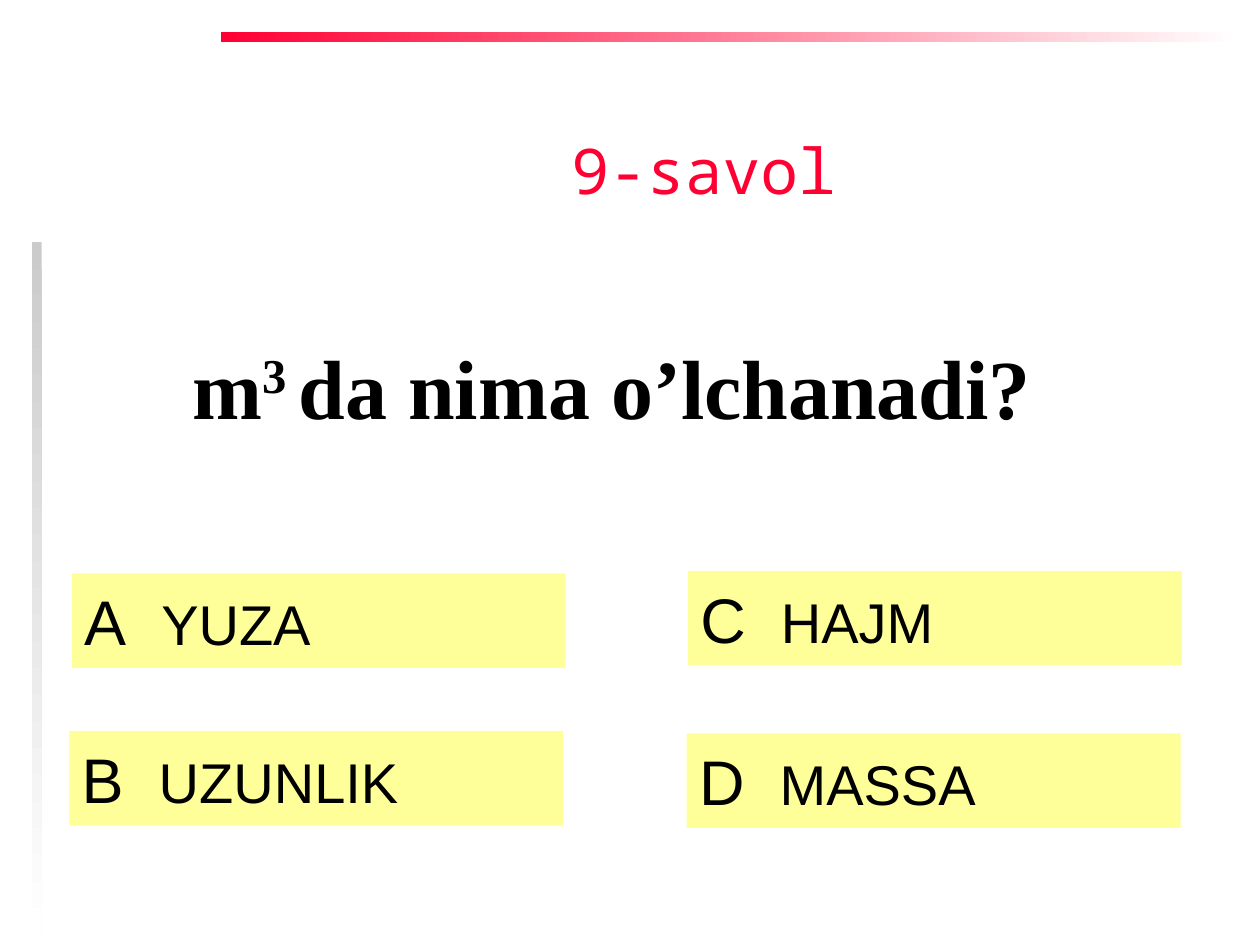
from lxml import etree
from pptx import Presentation
from pptx.dml.color import RGBColor
from pptx.enum.shapes import MSO_SHAPE
from pptx.enum.text import MSO_ANCHOR, MSO_AUTO_SIZE, PP_ALIGN
from pptx.oxml.ns import qn
from pptx.util import Inches, Pt

RECT = MSO_SHAPE.RECTANGLE
MIDDLE, TOP = MSO_ANCHOR.MIDDLE, MSO_ANCHOR.TOP
CENTER, LEFT = PP_ALIGN.CENTER, PP_ALIGN.LEFT
NO_FIT = MSO_AUTO_SIZE.NONE
COLORS = {"red": "FF0033", "gray": "CBCBCB", "white": "FFFFFF",
          "yellow": "FFFF99", "black": "000000"}


def add_run(p, text, size, font, color="black", bold=False, baseline=0):
    r = p.add_run()
    r.text = text
    r.font.size = Pt(size)
    r.font.name = font
    r.font.bold = bold
    r.font.color.rgb = RGBColor.from_string(COLORS[color])
    if baseline:
        r._r.get_or_add_rPr().set("baseline", str(baseline * 1000))


def add_rect(s, left, top, width, height):
    sp = s.shapes.add_shape(RECT, Inches(left), Inches(top), Inches(width), Inches(height))
    sp.shadow.inherit = False
    sp.line.fill.background()
    return sp


prs = Presentation()
prs.slide_width, prs.slide_height = Inches(10), Inches(7.5)
s = prs.slides.add_slide(prs.slide_layouts[1])
title, body = s.placeholders

bars = [(1.75, 0.25, 8.08, 0.08, "red", 0), (0.25, 1.92, 0.08, 5.5, "gray", 270)]
for left, top, width, height, color, angle in bars:
    sp = add_rect(s, left, top, width, height)
    sp.fill.gradient()
    sp.fill.gradient_angle = angle
    for stop, position, name in zip(sp.fill.gradient_stops, (0, 1), (color, "white")):
        stop.position = position
        stop.color.rgb = RGBColor.from_string(COLORS[name])

title.left, title.top, title.width, title.height = [Inches(v) for v in (4.28, 0.9, 2.61, 0.88)]
tf = title.text_frame
tf.auto_size = NO_FIT
tf.word_wrap = False
tf.vertical_anchor = MIDDLE
p = tf.paragraphs[0]
p.alignment = CENTER
add_run(p, "9-savol", 36, "Noto Sans Mono", color="red")

body.left, body.top, body.width, body.height = [Inches(v) for v in (0.84, 2.53, 8.03, 1.57)]
tf = body.text_frame
tf.auto_size = NO_FIT
tf.word_wrap = True
tf.vertical_anchor = TOP
tf.margin_top = Inches(0.13)
p = tf.paragraphs[0]
pPr = p._p.get_or_add_pPr()
etree.SubElement(pPr, qn("a:buNone"))
pPr.set("marL", str(Inches(0.38)))
pPr.set("indent", str(Inches(-0.38)))
p.alignment = CENTER
p.space_before = Pt(0)
for text, baseline in [("m", 0), ("3 ", 30), ("da nima o’lchanadi?", 0)]:
    add_run(p, text, 48, "Times New Roman", bold=True, baseline=baseline)

answers = [("А", "YUZA", 0.57, 4.55), ("B", "UZUNLIK", 0.55, 5.8),
           ("C", "HAJM", 5.46, 4.53), ("D", "MASSA", 5.45, 5.82)]
for letter, answer, left, top in answers:
    sp = add_rect(s, left, top, 3.92, 0.75)
    sp.fill.solid()
    sp.fill.fore_color.rgb = RGBColor.from_string(COLORS["yellow"])
    tf = sp.text_frame
    tf.word_wrap = True
    tf.vertical_anchor = MIDDLE
    p = tf.paragraphs[0]
    p.alignment = LEFT
    add_run(p, f"{letter}  ", 36, "Arial")
    add_run(p, answer, 32, "Arial")

prs.save("out.pptx")
